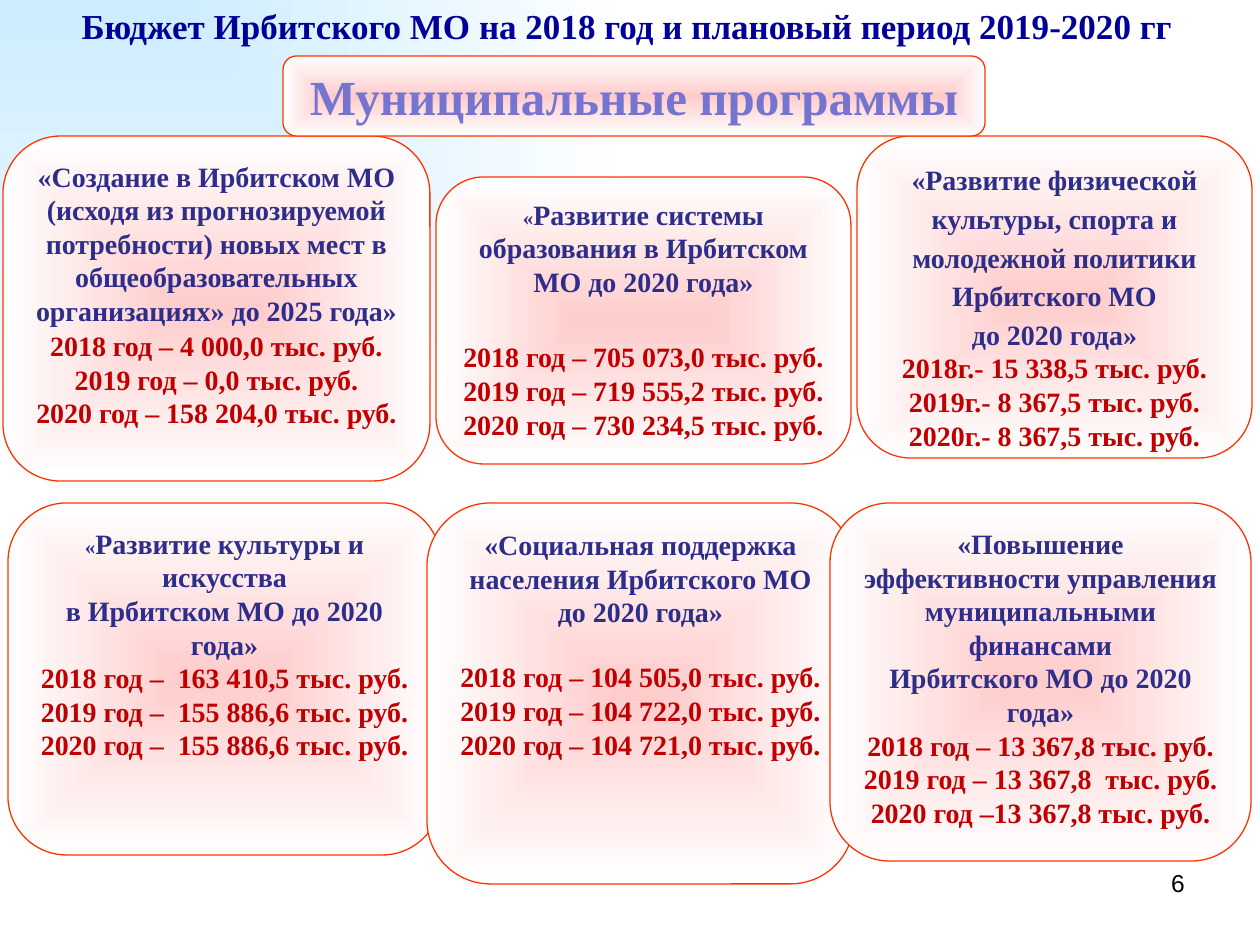
from pptx import Presentation
from pptx.dml.color import RGBColor
from pptx.enum.shapes import MSO_SHAPE as Shape
from pptx.enum.text import MSO_ANCHOR as Anchor, PP_ALIGN as Align
from pptx.oxml import parse_xml
from pptx.oxml.ns import nsdecls, qn
from pptx.util import Emu, Pt

PX = 914400 / 126
SERIF = "Times New Roman"
NAVY, RED, EDGE = "2D2D8A", "C00000", "FF3300"

CARDS = [
    ((3, 136, 427, 345),
     ["«Создание в Ирбитском МО (исходя из прогнозируемой потребности) новых мест "
      "в общеобразовательных организациях» до 2025 года»"],
     ["2018 год – 4 000,0 тыс. руб.", "2019 год – 0,0 тыс. руб.",
      "2020 год – 158 204,0 тыс. руб."],
     dict(gap=1)),
    ((8, 503, 433, 352),
     ["«Развитие культуры и искусства", "в Ирбитском МО до 2020 года»"],
     ["2018 год –  163 410,5 тыс. руб.", "2019 год –  155 886,6 тыс. руб.",
      "2020 год –  155 886,6 тыс. руб."],
     dict(mark=12)),
    ((427, 503, 427, 381),
     ["«Социальная поддержка населения Ирбитского МО до 2020 года»"],
     ["2018 год – 104 505,0 тыс. руб.", "2019 год – 104 722,0 тыс. руб.",
      "2020 год – 104 721,0 тыс. руб."],
     dict(gap=18)),
    ((857, 136, 395, 322),
     ["«Развитие физической культуры, спорта и молодежной политики Ирбитского МО",
      "до 2020 года»"],
     ["2018г.- 15 338,5 тыс. руб.", "2019г.- 8 367,5 тыс. руб.",
      "2020г.- 8 367,5 тыс. руб."],
     dict(lead=1.15)),
    ((830, 503, 421, 358),
     ["«Повышение эффективности управления муниципальными финансами",
      "Ирбитского МО до 2020 года»"],
     ["2018 год – 13 367,8 тыс. руб.", "2019 год – 13 367,8  тыс. руб.",
      "2020 год –13 367,8 тыс. руб."],
     {}),
    ((436, 177, 415, 287),
     ["«Развитие системы образования в Ирбитском МО до 2020 года»"],
     ["2018 год – 705 073,0 тыс. руб.", "2019 год – 719 555,2 тыс. руб.",
      "2020 год – 730 234,5 тыс. руб."],
     dict(mark=12, gap=24)),
]


def scale(box):
    """Turn px lengths into EMU."""
    return [Emu(round(n * PX)) for n in box]


def tint(color, code):
    """Set a colour from a hex string."""
    color.rgb = RGBColor.from_string(code)


def glow(fill, root, start, kind, rect):
    """Give a fill a gradient from a colour to white along a path."""
    fill.gradient()
    for stop, code in zip(fill.gradient_stops, (start, "FFFFFF")):
        tint(stop.color, code)
    grad = next(root.iter(qn("a:gradFill")))
    grad.remove(grad.find(qn("a:lin")))
    sides = " ".join(f'{side}="{n * 1000}"' for side, n in zip("ltrb", rect))
    grad.append(parse_xml(
        f'<a:path {nsdecls("a")} path="{kind}"><a:fillToRect {sides}/></a:path>'))


def write(frame, text, size=16, color=NAVY, bold=True, font=SERIF,
          align=Align.CENTER, lead=None, gap=0, mark=None):
    """Add a paragraph, with its first letter in another size if mark is given."""
    fresh = not frame.paragraphs[0].runs
    par = frame.paragraphs[0] if fresh else frame.add_paragraph()
    par.alignment = align
    if lead:
        par.line_spacing = lead
    if gap:
        par.space_before = Pt(gap)
    parts = [(text[0], mark), (text[1:], size)] if mark else [(text, size)]
    for words, high in parts:
        run = par.add_run()
        run.text = words
        run.font.size, run.font.bold, run.font.name = Pt(high), bold, font
        tint(run.font.color, color)


def label(slide, box, text, **form):
    """Place one line of plain text."""
    frame = slide.shapes.add_textbox(*scale(box)).text_frame
    frame.word_wrap = True
    frame.vertical_anchor = Anchor.MIDDLE
    write(frame, text, **form)


def panel(slide, box, anchor=Anchor.TOP):
    """Draw a rounded panel and return its text frame."""
    shape = slide.shapes.add_shape(Shape.ROUNDED_RECTANGLE, *scale(box))
    shape.shadow.inherit = False
    glow(shape.fill, shape._element, "FFCCCC", "shape", (50, 50, 50, 50))
    tint(shape.line.color, EDGE)
    shape.line.width = Pt(0.75)
    shape.text_frame.word_wrap = True
    shape.text_frame.vertical_anchor = anchor
    return shape.text_frame


def card(slide, box, heads, sums, lead=None, gap=0, mark=None):
    """Fill a panel with a programme name and its yearly sums."""
    frame = panel(slide, box)
    for i, head in enumerate(heads):
        write(frame, head, lead=lead, mark=None if i else mark)
    for i, line in enumerate(sums):
        write(frame, line, color=RED, gap=0 if i else gap)


def main():
    """Build the slide and save it."""
    deck = Presentation()
    deck.slide_width, deck.slide_height = scale((1260, 945))
    slide = deck.slides.add_slide(deck.slide_layouts[6])
    glow(slide.background.fill, slide._element, "CCECFF", "rect", (0, 0, 100, 100))
    label(slide, (903, 861, 294, 44), "6", size=14, color="000000",
          bold=False, font="Arial", align=Align.RIGHT)
    label(slide, (60, 6, 1134, 40),
          "Бюджет Ирбитского МО на 2018 год и плановый период 2019-2020 гг",
          size=20, color="000099")
    for box, heads, sums, form in CARDS:
        card(slide, box, heads, sums, **form)
    write(panel(slide, (283, 56, 702, 80), Anchor.MIDDLE),
          "Муниципальные программы", size=28, color="7575D1")
    deck.save("out.pptx")


if __name__ == "__main__":
    main()
